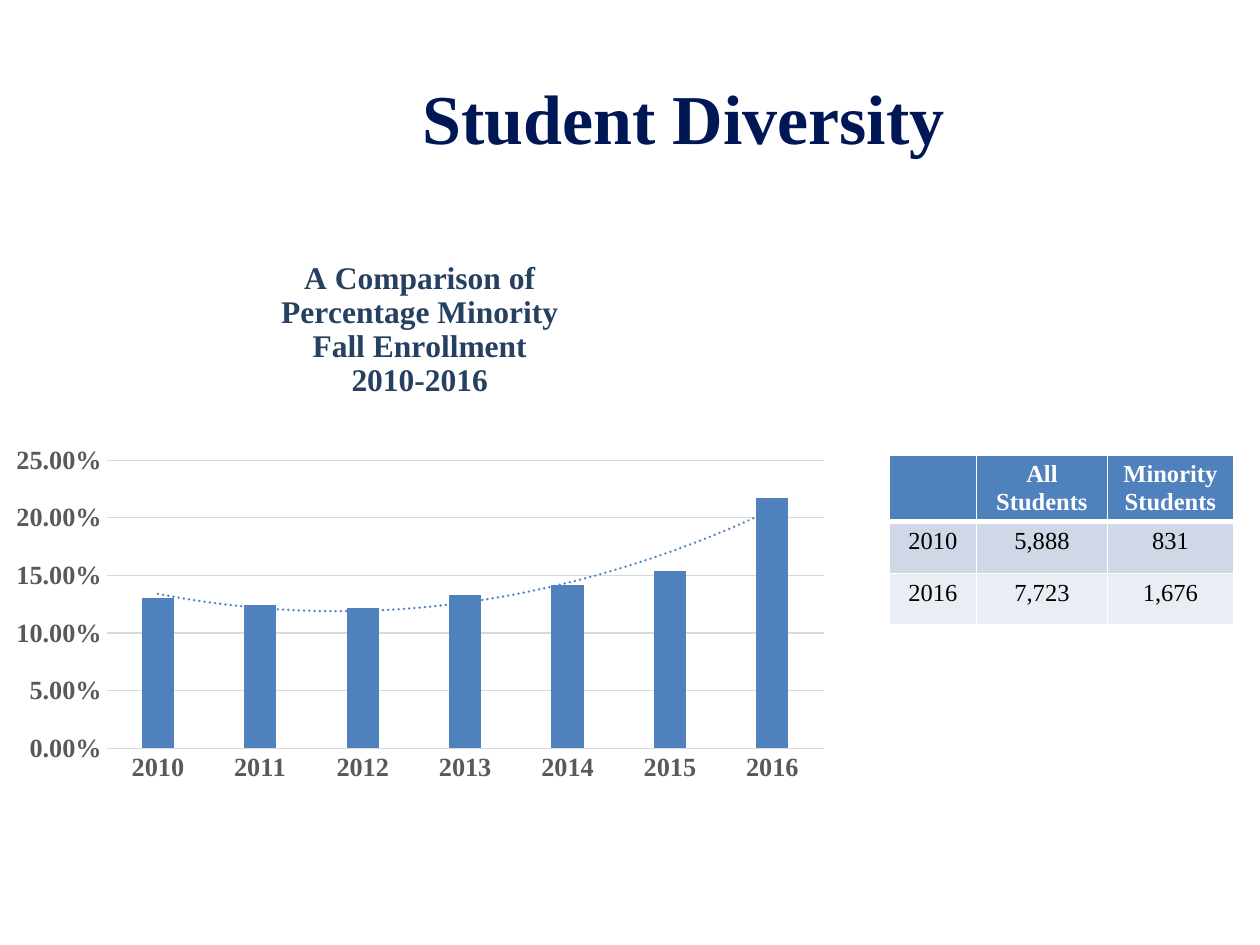
from pptx import Presentation
from pptx.chart.data import CategoryChartData
from pptx.dml.color import RGBColor
from pptx.enum.chart import XL_CHART_TYPE as ChartType, XL_TICK_MARK as TickMark
from pptx.enum.text import MSO_ANCHOR as Anchor, PP_ALIGN as Align
from pptx.oxml import parse_xml
from pptx.oxml.ns import nsdecls, qn
from pptx.util import Inches, Pt

FONT = "Times New Roman"
NAVY, TITLE_BLUE, BLUE = "001756", "254061", "4F81BD"
WHITE, BLACK, GRAY, GRID = "FFFFFF", "000000", "595959", "D9D9D9"
ROW_FILLS = [BLUE, "D0D8E8", "E9EDF4"]

CHART_TITLE = ["A Comparison of", "Percentage Minority", "Fall Enrollment", "2010-2016"]
MINORITY_SHARE = {
    "2010": 0.13, "2011": 0.124, "2012": 0.122, "2013": 0.133,
    "2014": 0.142, "2015": 0.154, "2016": 0.217,
}
ENROLLMENT = [
    ["", "All Students", "Minority Students"],
    ["2010", "5,888", "831"],
    ["2016", "7,723", "1,676"],
]


def color(value):
    return RGBColor.from_string(value)


def style_font(font, size, value, bold=False):
    font.name, font.size, font.bold = FONT, Pt(size), bold
    font.color.rgb = color(value)


def add_centered_run(para, text, size, value, bold=False):
    para.alignment = Align.CENTER
    span = para.add_run()
    span.text = text
    style_font(span.font, size, value, bold)


def add_title(page, text):
    box = page.shapes.title
    box.left, box.top = Inches(1.86), Inches(0.3)
    box.width, box.height = Inches(7.13), Inches(1.25)
    box.text_frame.vertical_anchor = Anchor.MIDDLE
    add_centered_run(box.text_frame.paragraphs[0], text, 40, NAVY, True)


def place_chart_part(element, index, target, **fractions):
    """Set a manual layout, in fractions of the chart's size."""
    for old in element.findall(qn("c:layout")):
        element.remove(old)
    sizes = "".join(f'<c:{key} val="{part}"/>' for key, part in fractions.items())
    element.insert(index, parse_xml(
        f'<c:layout {nsdecls("c")}><c:manualLayout>{target}'
        f'<c:xMode val="edge"/><c:yMode val="edge"/>{sizes}'
        "</c:manualLayout></c:layout>"))


def add_trend(series):
    """Add a dotted second-order trend line."""
    trend = parse_xml(
        f'<c:trendline {nsdecls("c", "a")}><c:spPr><a:ln w="{Pt(1.5)}" cap="rnd">'
        f'<a:solidFill><a:srgbClr val="{BLUE}"/></a:solidFill>'
        '<a:prstDash val="sysDot"/></a:ln></c:spPr>'
        '<c:trendlineType val="poly"/><c:order val="2"/>'
        '<c:dispRSqr val="0"/><c:dispEq val="0"/></c:trendline>')
    series._element.find(qn("c:cat")).addprevious(trend)


def style_axis(axis):
    axis.major_tick_mark = axis.minor_tick_mark = TickMark.NONE
    style_font(axis.tick_labels.font, 15, GRAY, True)


def style_line(line):
    line.color.rgb = color(GRID)
    line.width = Pt(0.75)


def add_chart_title(chart):
    chart.has_title = True
    frame = chart.chart_title.text_frame
    for index, text in enumerate(CHART_TITLE):
        para = frame.add_paragraph() if index else frame.paragraphs[0]
        add_centered_run(para, text, 18, TITLE_BLUE, True)
    chart.chart_title.include_in_layout = False
    place_chart_part(chart.chart_title._element, 1, "", x=0.33, y=0.04)


def add_share_chart(page):
    data = CategoryChartData(number_format="0.00%")
    data.categories = list(MINORITY_SHARE)
    data.add_series("Series 1", list(MINORITY_SHARE.values()))
    chart = page.shapes.add_chart(
        ChartType.COLUMN_CLUSTERED, Inches(0), Inches(1.85),
        Inches(6.67), Inches(4.44), data).chart
    chart.has_legend = False
    style_font(chart.font, 10, BLACK)
    add_chart_title(chart)

    plot = chart.plots[0]
    plot.gap_width, plot.overlap, plot.vary_by_categories = 219, -27, False
    series = plot.series[0]
    series.format.fill.solid()
    series.format.fill.fore_color.rgb = color(BLUE)
    add_trend(series)

    style_axis(chart.category_axis)
    style_line(chart.category_axis.format.line)
    values = chart.value_axis
    style_axis(values)
    values.minimum_scale, values.maximum_scale, values.major_unit = 0, 0.25, 0.05
    values.tick_labels.number_format = "0.00%"
    values.tick_labels.number_format_is_linked = False
    values.format.line.fill.background()
    style_line(values.major_gridlines.format.line)
    place_chart_part(plot._element.getparent(), 0, '<c:layoutTarget val="inner"/>',
                     x=0.127, y=0.406, w=0.853, h=0.515)


def set_borders(cell, top, bottom):
    widths = {"lnL": 1, "lnR": 1, "lnT": top, "lnB": bottom}
    properties = cell._tc.get_or_add_tcPr()
    for index, (side, width) in enumerate(widths.items()):
        properties.insert(index, parse_xml(
            f'<a:{side} {nsdecls("a")} w="{Pt(width)}"><a:solidFill>'
            f'<a:srgbClr val="{WHITE}"/></a:solidFill></a:{side}>'))


def add_enrollment_table(page):
    table = page.shapes.add_table(
        3, 3, Inches(7.06), Inches(3.61), Inches(2.73), Inches(1.23)).table
    for column, width in zip(table.columns, (0.69, 1.04, 1)):
        column.width = Inches(width)
    for row_index, texts in enumerate(ENROLLMENT):
        header = row_index == 0
        table.rows[row_index].height = Inches(0.41)
        for column_index, text in enumerate(texts):
            cell = table.cell(row_index, column_index)
            cell.fill.solid()
            cell.fill.fore_color.rgb = color(ROW_FILLS[row_index])
            set_borders(cell, 3 if row_index == 1 else 1, 3 if header else 1)
            if text:
                add_centered_run(cell.text_frame.paragraphs[0], text, 14,
                                 WHITE if header else BLACK, header)


def main():
    deck = Presentation()
    deck.slide_width, deck.slide_height = Inches(10), Inches(7.5)
    page = deck.slides.add_slide(deck.slide_layouts[5])
    add_title(page, "Student Diversity")
    add_share_chart(page)
    add_enrollment_table(page)
    deck.save("out.pptx")


if __name__ == "__main__":
    main()
